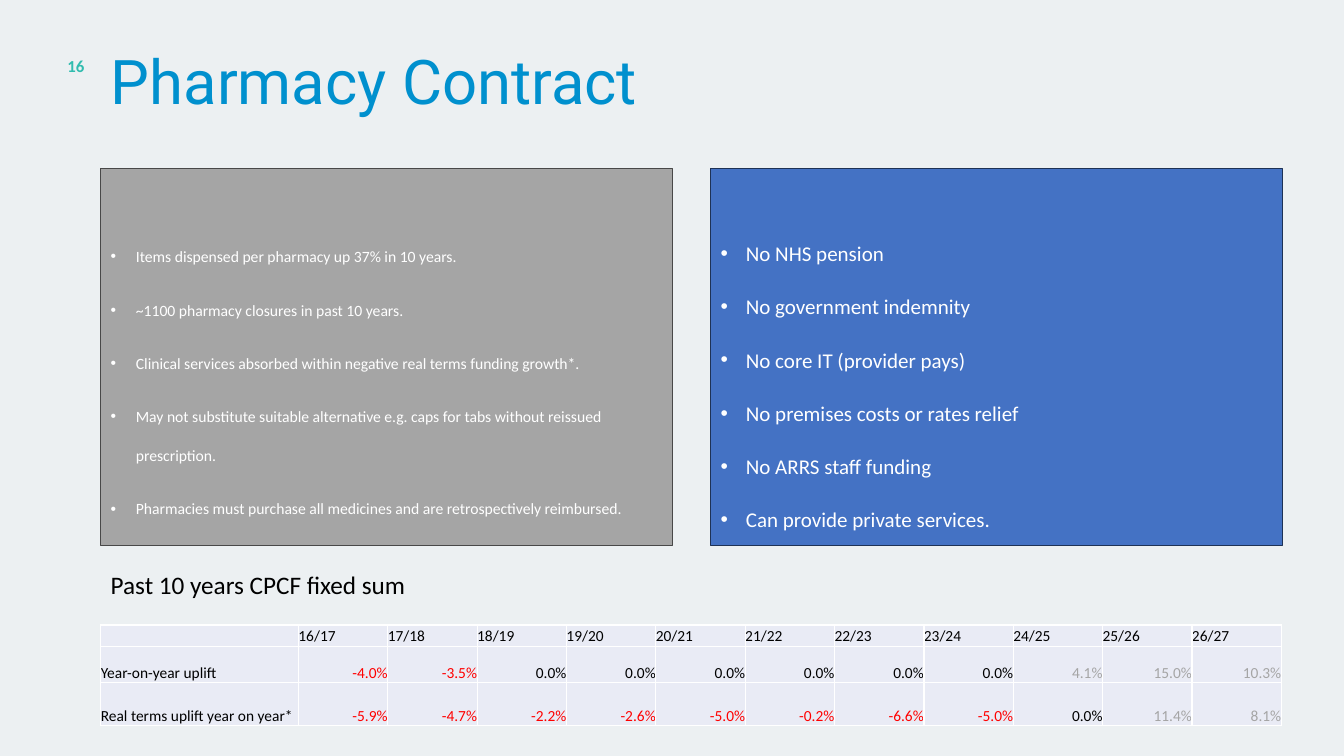
from dataclasses import dataclass

from lxml import etree
from pptx import Presentation
from pptx.dml.color import RGBColor
from pptx.enum.shapes import MSO_SHAPE
from pptx.enum.text import MSO_ANCHOR, MSO_AUTO_SIZE, PP_ALIGN
from pptx.oxml.ns import qn
from pptx.util import Inches, Pt

RECTANGLE = MSO_SHAPE.RECTANGLE
TOP, MIDDLE, BOTTOM = MSO_ANCHOR.TOP, MSO_ANCHOR.MIDDLE, MSO_ANCHOR.BOTTOM
LEFT, RIGHT = PP_ALIGN.LEFT, PP_ALIGN.RIGHT
NO_AUTO_SIZE = MSO_AUTO_SIZE.NONE

COLORS = {
    "background": "ECF0F2", "title": "0090CE", "number": "31BCAF",
    "grey": "A5A5A5", "grey_line": "484848", "blue": "4472C4",
    "blue_line": "1E3256", "white": "FFFFFF", "black": "000000",
    "red": "FF0000", "cell": "E9EBF5",
}
BODY_FONT, TITLE_FONT = "Calibri", "Roboto"
MARGIN = 1
TABLE_WIDTH, LABEL_WIDTH = 11.71, 1.96
TABLE_TOP = 6.2
ROW_HEIGHTS = (0.21, 0.36, 0.43)
TABLE_FONT_SIZE = 11


@dataclass
class Panel:
    left: float
    fill: str
    line: str
    size: float
    items: list[str]


PANELS = [
    Panel(MARGIN, "grey", "grey_line", 11.2, [
        "Items dispensed per pharmacy up 37% in 10 years.",
        "~1100 pharmacy closures in past 10 years.",
        "Clinical services absorbed within negative real terms funding growth*.",
        "May not substitute suitable alternative e.g. caps for tabs without reissued prescription.",
        "Pharmacies must purchase all medicines and are retrospectively reimbursed.",
    ]),
    Panel(7.05, "blue", "blue_line", 15, [
        "No NHS pension",
        "No government indemnity",
        "No core IT (provider pays)",
        "No premises costs or rates relief",
        "No ARRS staff funding",
        "Can provide private services.",
    ]),
]

YEARS = [f"{year}/{year + 1}" for year in range(16, 27)]
UPLIFTS = {
    "Year-on-year uplift": [-4.0, -3.5, 0, 0, 0, 0, 0, 0, 4.1, 15.0, 10.3],
    "Real terms uplift year on year*": [
        -5.9, -4.7, -2.2, -2.6, -5.0, -0.2, -6.6, -5.0, 0, 11.4, 8.1],
}


def color(name: str) -> RGBColor:
    return RGBColor.from_string(COLORS[name])


def set_font(paragraph, size: float, color_name: str,
             name: str = BODY_FONT, bold: bool = False) -> None:
    font = paragraph.font
    font.name, font.size, font.bold = name, Pt(size), bold
    font.color.rgb = color(color_name)


def add_label(slide, text: str, left: float, top: float, width: float,
              size: float, color_name: str, anchor=TOP, bold: bool = False) -> None:
    box = slide.shapes.add_textbox(Inches(left), Inches(top), Inches(width), Inches(0.4))
    frame = box.text_frame
    frame.word_wrap, frame.vertical_anchor = True, anchor
    frame.text = text
    set_font(frame.paragraphs[0], size, color_name, bold=bold)


def add_bullet(paragraph) -> None:
    properties = paragraph._p.get_or_add_pPr()
    properties.set("marL", str(Inches(0.25)))
    properties.set("indent", str(Inches(-0.25)))
    etree.SubElement(properties, qn("a:buFont")).set("typeface", "Arial")
    etree.SubElement(properties, qn("a:buChar")).set("char", "•")


def add_panel(slide, panel: Panel) -> None:
    shape = slide.shapes.add_shape(
        RECTANGLE, Inches(panel.left), Inches(1.67), Inches(5.67), Inches(3.74))
    shape.shadow.inherit = False
    shape.fill.solid()
    shape.fill.fore_color.rgb = color(panel.fill)
    shape.line.color.rgb = color(panel.line)
    shape.line.width = Pt(1)
    frame = shape.text_frame
    frame.word_wrap, frame.vertical_anchor = True, TOP
    frame.margin_top = Inches(0.58)
    for index, item in enumerate(panel.items):
        paragraph = frame.add_paragraph() if index else frame.paragraphs[0]
        paragraph.text = item
        add_bullet(paragraph)
        paragraph.alignment = LEFT
        paragraph.line_spacing = Pt(28)
        if index:
            paragraph.space_before = Pt(10)
        set_font(paragraph, panel.size, "white")


def add_borders(cell) -> None:
    properties = cell._tc.get_or_add_tcPr()
    for index, side in enumerate(("lnL", "lnR", "lnT", "lnB")):
        line = etree.Element(qn(f"a:{side}"), w=str(Pt(1)))
        fill = etree.SubElement(line, qn("a:solidFill"))
        etree.SubElement(fill, qn("a:srgbClr")).set("val", COLORS["white"])
        properties.insert(index, line)


def fill_cell(cell, text: str, color_name: str = "black", alignment=LEFT) -> None:
    cell.margin_left = cell.margin_right = cell.margin_top = cell.margin_bottom = 0
    cell.vertical_anchor = BOTTOM
    cell.fill.solid()
    cell.fill.fore_color.rgb = color("cell")
    add_borders(cell)
    paragraph = cell.text_frame.paragraphs[0]
    paragraph.alignment = alignment
    set_font(paragraph, TABLE_FONT_SIZE, color_name)
    if text:
        paragraph.text = text
    else:
        # An empty cell takes its height from the end-of-paragraph size
        end = etree.SubElement(paragraph._p, qn("a:endParaRPr"))
        end.set("sz", str(TABLE_FONT_SIZE * 100))


def uplift_color(value: float) -> str:
    if value < 0:
        return "red"
    return "grey" if value > 0 else "black"


def add_uplift_table(slide) -> None:
    table = slide.shapes.add_table(
        len(ROW_HEIGHTS), len(YEARS) + 1, Inches(MARGIN), Inches(TABLE_TOP),
        Inches(TABLE_WIDTH), Inches(sum(ROW_HEIGHTS))).table
    table.first_row = table.horz_banding = False
    for row, height in zip(table.rows, ROW_HEIGHTS):
        row.height = Inches(height)
    year_width = (TABLE_WIDTH - LABEL_WIDTH) / len(YEARS)
    for index, column in enumerate(table.columns):
        column.width = Inches(year_width if index else LABEL_WIDTH)

    for index, heading in enumerate(["", *YEARS]):
        fill_cell(table.cell(0, index), heading)
    for row_index, (label, values) in enumerate(UPLIFTS.items(), start=1):
        fill_cell(table.cell(row_index, 0), label)
        for index, value in enumerate(values, start=1):
            fill_cell(table.cell(row_index, index), f"{value:.1f}%",
                      uplift_color(value), RIGHT)


def add_title(slide) -> None:
    title = slide.shapes.title
    title.left, title.top = Inches(MARGIN), Inches(0.11)
    title.width, title.height = Inches(11.5), Inches(1.45)
    frame = title.text_frame
    frame.text = "Pharmacy Contract"
    frame.word_wrap, frame.vertical_anchor = True, MIDDLE
    frame.auto_size = NO_AUTO_SIZE
    paragraph = frame.paragraphs[0]
    paragraph.alignment = LEFT
    paragraph.line_spacing = 0.9
    set_font(paragraph, 44, "title", TITLE_FONT)


def main() -> None:
    presentation = Presentation()
    presentation.slide_width, presentation.slide_height = Inches(13.33), Inches(7.5)
    slide = presentation.slides.add_slide(presentation.slide_layouts[5])
    slide.background.fill.solid()
    slide.background.fill.fore_color.rgb = color("background")

    # Heading and slide number
    add_title(slide)
    add_label(slide, "16", 0.57, 0.45, 1, 12, "number", MIDDLE, bold=True)

    # Bullet panels
    for panel in PANELS:
        add_panel(slide, panel)

    # Funding table
    add_label(slide, "Past 10 years CPCF fixed sum", MARGIN, 5.6, 4.67, 18, "black")
    add_uplift_table(slide)

    presentation.save("out.pptx")


if __name__ == "__main__":
    main()
